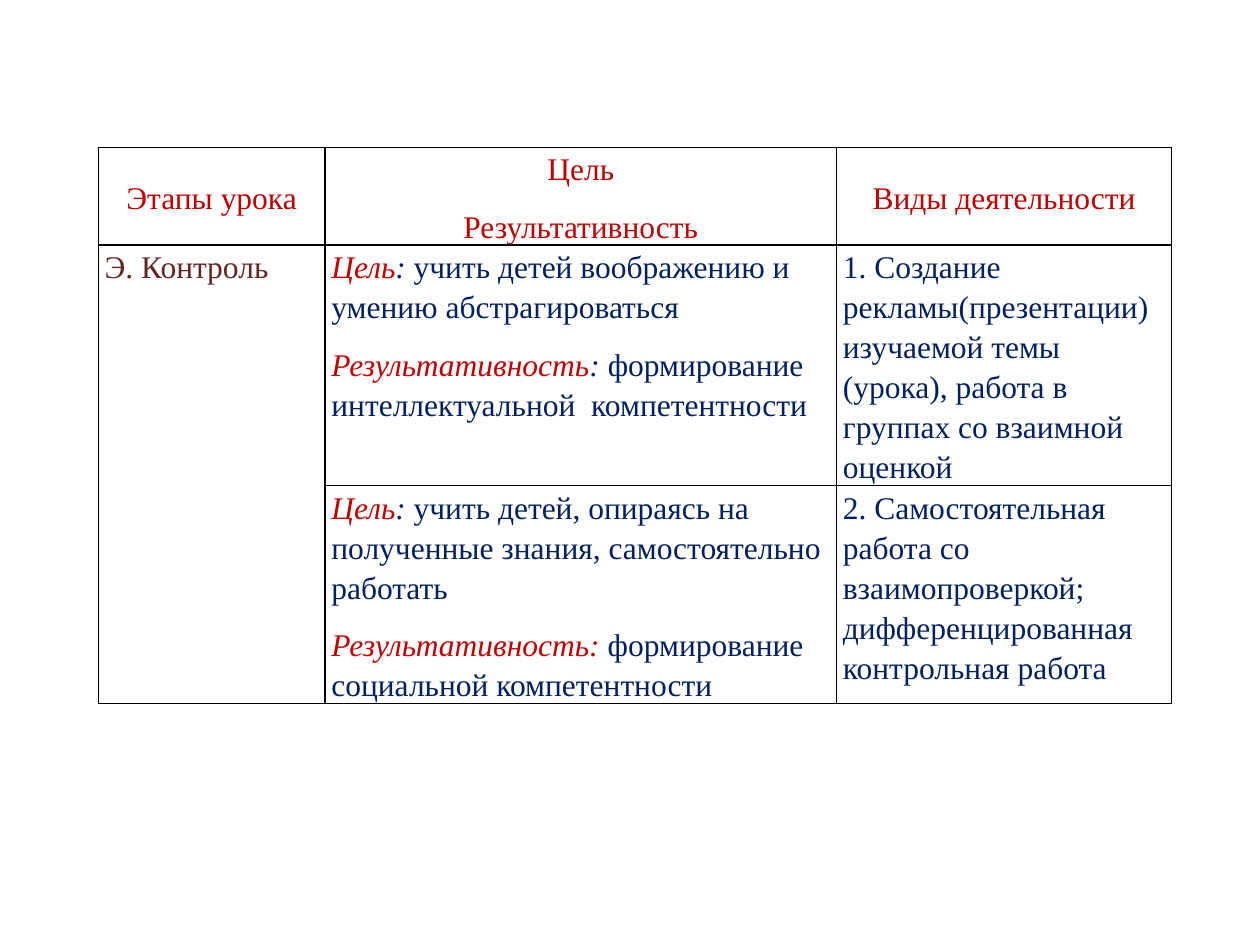
from lxml.etree import SubElement
from pptx import Presentation
from pptx.dml.color import RGBColor
from pptx.enum.text import MSO_ANCHOR, PP_ALIGN
from pptx.oxml.ns import qn
from pptx.util import Inches, Pt

COLORS = {"red": "C00000", "navy": "002060", "brown": "632523", "border": "000000"}
COLUMN_WIDTHS = [1.8, 4.06, 2.66]
ROW_HEIGHTS = [0.67, 0.67, 0.62]


def plain(text, color):
    return [(text, color, False)]


def labelled(label, text):
    return [(label, "red", True), (": ", "navy", True), (text, "navy", False)]


ROWS = [
    [
        [plain("Этапы урока", "red")],
        [plain("Цель", "red"), plain("Результативность", "red")],
        [plain("Виды деятельности", "red")],
    ],
    [
        [plain("Э. Контроль", "brown")],
        [
            labelled("Цель", "учить детей воображению и умению абстрагироваться"),
            labelled("Результативность", "формирование интеллектуальной  компетентности"),
        ],
        [plain("1. Создание рекламы(презентации) изучаемой темы (урока), "
               "работа в группах со взаимной оценкой", "navy")],
    ],
    [
        [],
        [
            labelled("Цель", "учить детей, опираясь на полученные знания, "
                             "самостоятельно работать"),
            [("Результативность:", "red", True),
             (" формирование  социальной компетентности", "navy", False)],
        ],
        [plain("2. Самостоятельная работа со взаимопроверкой; "
               "дифференцированная контрольная работа", "navy")],
    ],
]


def format_cell(cell, is_header):
    cell.margin_left = cell.margin_right = Inches(0.05)
    cell.margin_top = cell.margin_bottom = 0
    cell.vertical_anchor = MSO_ANCHOR.MIDDLE if is_header else MSO_ANCHOR.TOP
    properties = cell._tc.get_or_add_tcPr()
    for side in ("a:lnL", "a:lnR", "a:lnT", "a:lnB"):
        line = SubElement(properties, qn(side), w=str(Pt(1)))
        fill = SubElement(line, qn("a:solidFill"))
        SubElement(fill, qn("a:srgbClr"), val=COLORS["border"])
    cell.fill.background()


def write_cell(cell, paragraphs, is_header):
    frame = cell.text_frame
    for index, spans in enumerate(paragraphs):
        para = frame.add_paragraph() if index else frame.paragraphs[0]
        para.alignment = PP_ALIGN.CENTER if is_header else PP_ALIGN.LEFT
        para.line_spacing = 1.15
        para.space_after = Pt(10)
        para.font.size = Pt(18)
        para.font.name = "Times New Roman"
        for text, color, italic in spans:
            span = para.add_run()
            span.text = text
            span.font.size = Pt(18)
            span.font.name = "Times New Roman"
            span.font.bold = False
            span.font.italic = italic
            span.font.color.rgb = RGBColor.from_string(COLORS[color])


def add_lesson_table(page, left, top, width, height):
    box = page.shapes.add_table(len(ROWS), len(COLUMN_WIDTHS), left, top, width, height)
    table = box.table
    table.first_row = table.horz_banding = False
    for column, size in zip(table.columns, COLUMN_WIDTHS):
        column.width = Inches(size)
    for row, size in zip(table.rows, ROW_HEIGHTS):
        row.height = Inches(size)
    box.height = height
    table.cell(1, 0).merge(table.cell(2, 0))
    for row_index, row in enumerate(ROWS):
        for column_index, paragraphs in enumerate(row):
            cell = table.cell(row_index, column_index)
            format_cell(cell, row_index == 0)
            write_cell(cell, paragraphs, row_index == 0)


def main():
    deck = Presentation()
    deck.slide_width, deck.slide_height = Inches(10), Inches(7.5)
    page = deck.slides.add_slide(deck.slide_layouts[6])
    add_lesson_table(page, Inches(0.78), Inches(1.17), Inches(8.52), Inches(4.76))
    deck.save("out.pptx")


if __name__ == "__main__":
    main()
